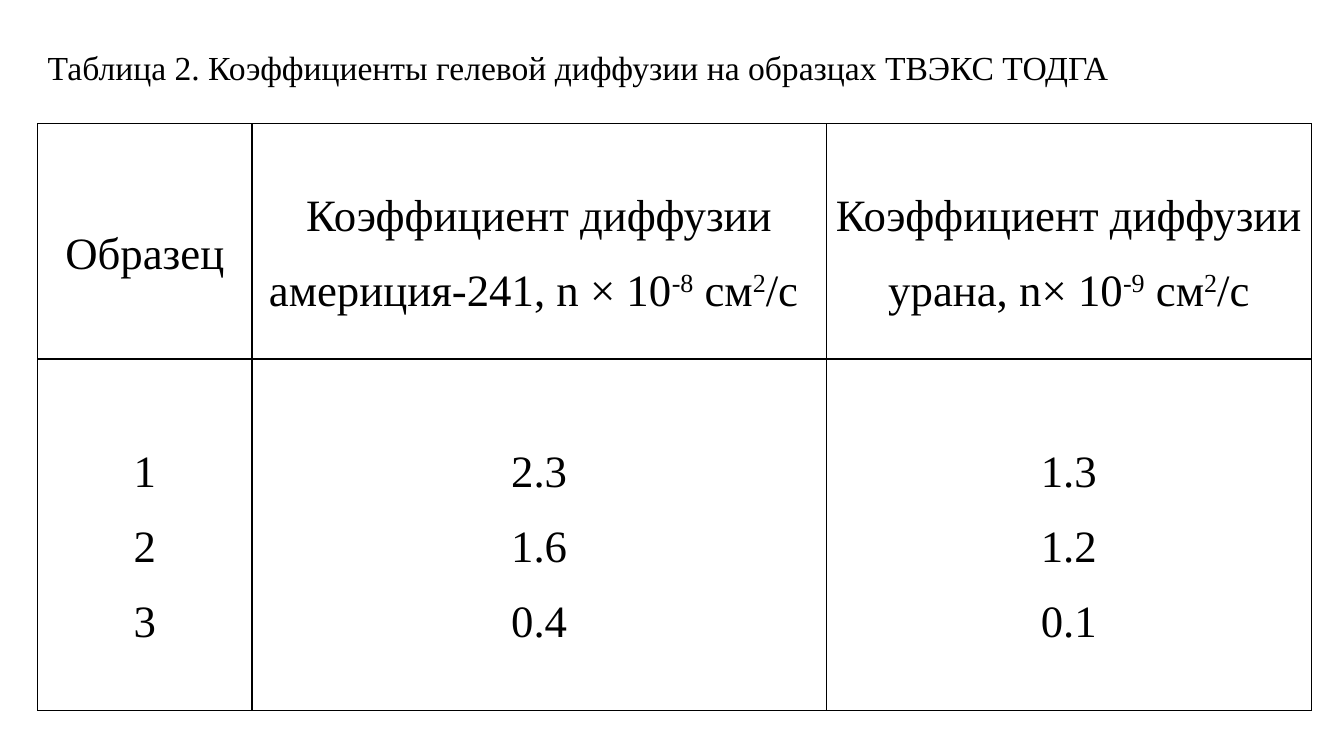
from pptx import Presentation
from pptx.dml.color import RGBColor
from pptx.enum.text import MSO_ANCHOR, PP_ALIGN
from pptx.oxml import parse_xml
from pptx.oxml.ns import nsdecls
from pptx.util import Pt

PX = 9525
BLACK = RGBColor(0, 0, 0)
FONT = "Times New Roman"
LEFT, TOP = 36, 118
COLUMNS = [204, 547, 462]
ROWS = [224, 335]
CELL_INSET = 7
SUPERSCRIPT = "30000"

TITLE = "Таблица 2. Коэффициенты гелевой диффузии на образцах ТВЭКС ТОДГА"
HEADERS = [
    ["Образец"],
    ["Коэффициент диффузии америция-241, n × 10", "-8", " см", "2", "/c "],
    ["Коэффициент диффузии урана, n× 10", "-9", " см", "2", "/c"],
]
SAMPLES = [["1", "2", "3"], ["2.3", "1.6", "0.4"], ["1.3", "1.2", "0.1"]]


def add_span(para, text, size, raised=False):
    span = para.add_run()
    span.text = text
    span.font.name = FONT
    span.font.size = Pt(size)
    span.font.color.rgb = BLACK
    if raised:
        span.font._element.set("baseline", SUPERSCRIPT)


def add_title(page):
    box = page.shapes.add_textbox(LEFT * PX, 40 * PX, sum(COLUMNS) * PX, 78 * PX)
    frame = box.text_frame
    frame.word_wrap = True
    frame.vertical_anchor = MSO_ANCHOR.TOP
    add_span(frame.paragraphs[0], TITLE, 24)


def add_borders(cell):
    properties = cell._tc.get_or_add_tcPr()
    for position, side in enumerate(["lnL", "lnR", "lnT", "lnB"]):
        border = parse_xml(
            f'<a:{side} {nsdecls("a")} w="{Pt(1)}"><a:solidFill>'
            f'<a:srgbClr val="{BLACK}"/></a:solidFill></a:{side}>'
        )
        properties.insert(position, border)


def fill_cell(cell, lines):
    cell.fill.background()
    add_borders(cell)
    cell.vertical_anchor = MSO_ANCHOR.MIDDLE
    cell.margin_left = cell.margin_right = CELL_INSET * PX
    cell.margin_top = cell.margin_bottom = 0
    frame = cell.text_frame
    for number, pieces in enumerate(lines):
        para = frame.add_paragraph() if number else frame.paragraphs[0]
        para.alignment = PP_ALIGN.CENTER
        para.line_spacing = 1.5
        for index, text in enumerate(pieces):
            add_span(para, text, 32, raised=index % 2 == 1)


def add_diffusion_table(page):
    table = page.shapes.add_table(
        len(ROWS), len(COLUMNS), LEFT * PX, TOP * PX, sum(COLUMNS) * PX, sum(ROWS) * PX
    ).table
    table.first_row = table.horz_banding = False
    for row, height in zip(table.rows, ROWS):
        row.height = height * PX
    for index, width in enumerate(COLUMNS):
        table.columns[index].width = width * PX
        fill_cell(table.cell(0, index), [HEADERS[index]])
        fill_cell(table.cell(1, index), [[value] for value in SAMPLES[index]])


def main():
    deck = Presentation()
    deck.slide_width = 1280 * PX
    deck.slide_height = 720 * PX
    page = deck.slides.add_slide(deck.slide_layouts[6])
    add_diffusion_table(page)
    add_title(page)
    deck.save("out.pptx")


if __name__ == "__main__":
    main()
